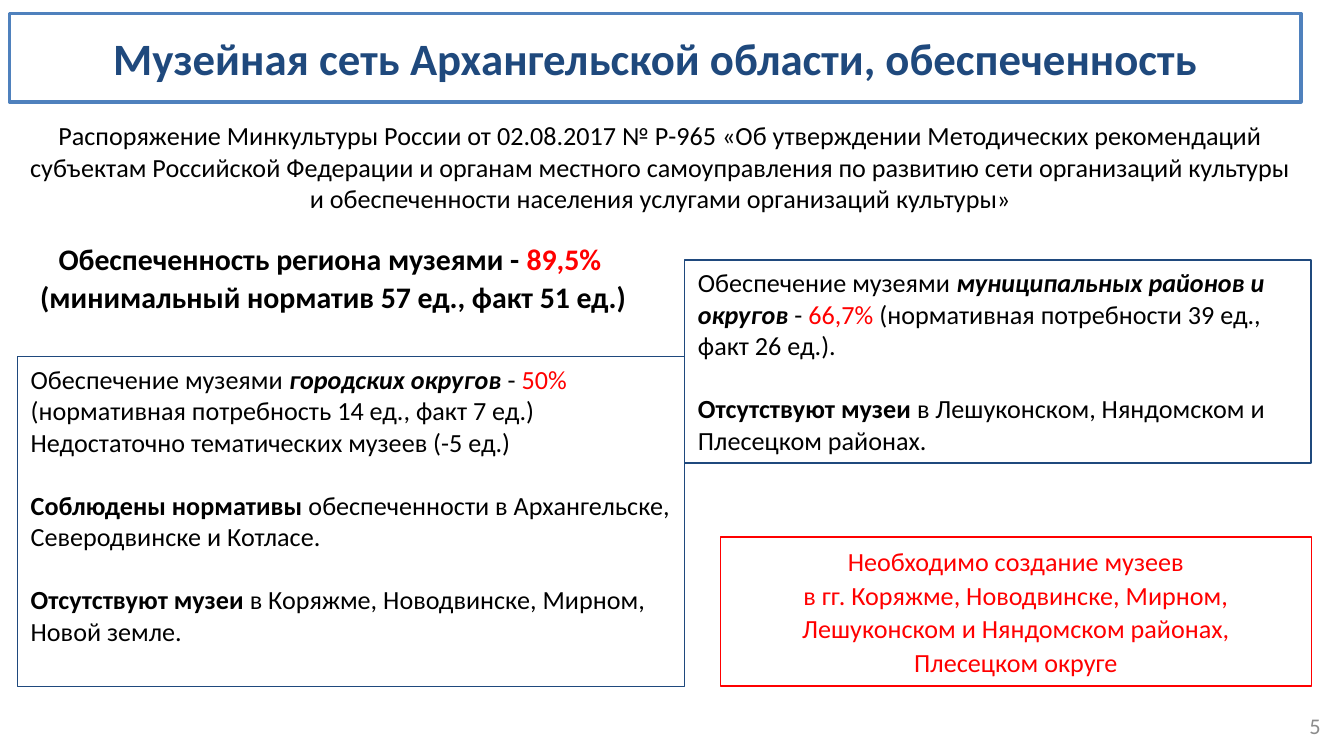
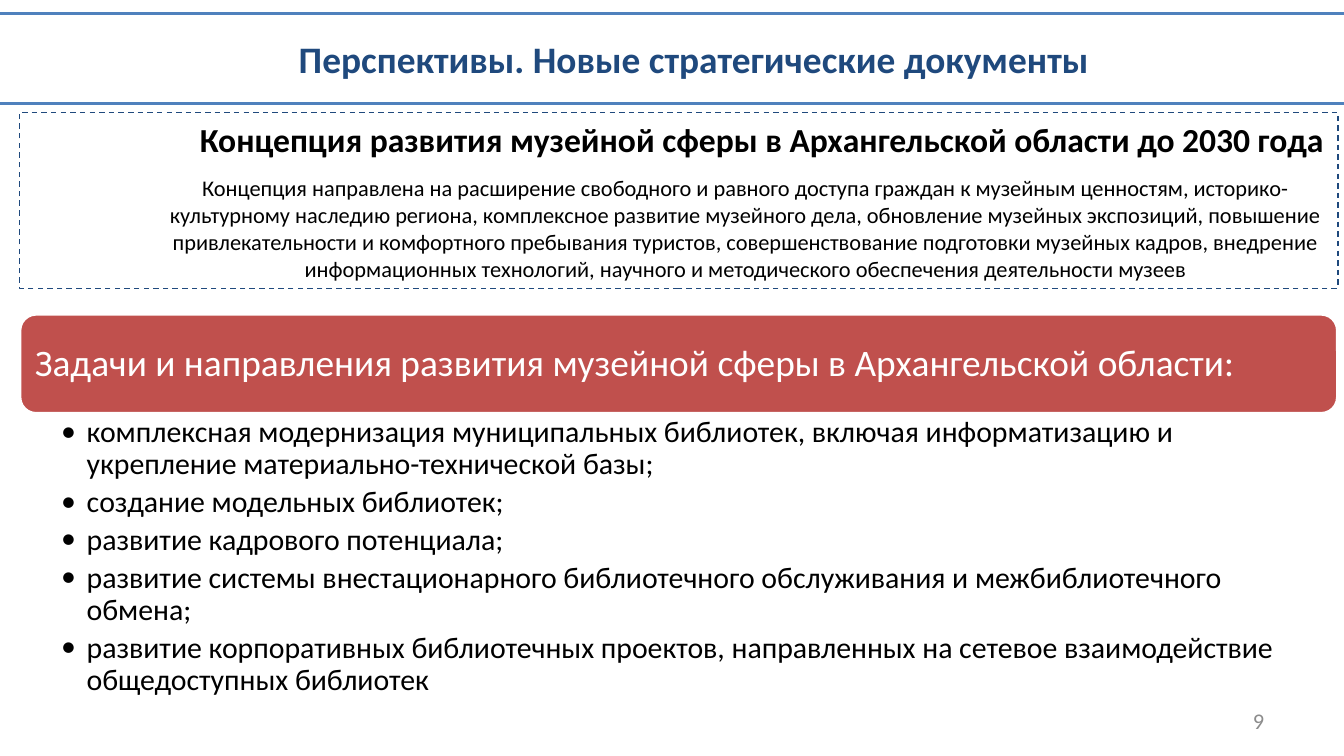
import lxml.etree
import pptx
import pptx.dml.color
import pptx.enum.dml
import pptx.enum.shapes
import pptx.enum.text
import pptx.oxml.ns
import pptx.util

PX = 4572  # 200 px to the inch
FONT = "Calibri"
RGBColor = pptx.dml.color.RGBColor
NAVY = RGBColor(0x1F, 0x49, 0x7D)
BLUE = RGBColor(0x4F, 0x81, 0xBD)
BRICK = RGBColor(0xC0, 0x50, 0x4D)
RED = RGBColor(0xFF, 0x00, 0x00)
GRAY = RGBColor(0x8C, 0x8C, 0x8C)
BLACK = RGBColor(0x00, 0x00, 0x00)
WHITE = RGBColor(0xFF, 0xFF, 0xFF)

LEFT = pptx.enum.text.PP_ALIGN.LEFT
CENTER = pptx.enum.text.PP_ALIGN.CENTER
RIGHT = pptx.enum.text.PP_ALIGN.RIGHT
TOP = pptx.enum.text.MSO_ANCHOR.TOP
MIDDLE = pptx.enum.text.MSO_ANCHOR.MIDDLE
RECTANGLE = pptx.enum.shapes.MSO_SHAPE.RECTANGLE
ROUNDED = pptx.enum.shapes.MSO_SHAPE.ROUNDED_RECTANGLE

BOLD = {"bold": True}
EMPHASIS = {"bold": True, "italic": True}
ALERT = {"color": RED}
PLAIN = {}
PADDING = (20, 10, 20, 10)
TOPIC_GAP = 17


def to_emu(box):
    return [pptx.util.Emu(length * PX) for length in box]


def format_run(run, size, color=BLACK, bold=False, italic=False):
    run.font.name = FONT
    run.font.size = pptx.util.Pt(size)
    run.font.color.rgb = color
    run.font.bold = bold
    run.font.italic = italic


def write(shape, paragraphs, size, align=LEFT, anchor=TOP, padding=PADDING,
          spacing=1.0, gaps=(), wrap=True, **style):
    """Fill a shape; a paragraph is a string or a list of (text, style) pieces."""
    frame = shape.text_frame
    frame.word_wrap = wrap
    frame.vertical_anchor = anchor
    (frame.margin_left, frame.margin_top,
     frame.margin_right, frame.margin_bottom) = to_emu(padding)
    for index, content in enumerate(paragraphs):
        paragraph = frame.add_paragraph() if index else frame.paragraphs[0]
        paragraph.alignment = align
        paragraph.line_spacing = spacing
        if isinstance(content, str):
            paragraph.text = content
            for run in paragraph.runs:
                format_run(run, size, **style)
        else:
            for text, piece_style in content:
                run = paragraph.add_run()
                run.text = text
                format_run(run, size, **{**style, **piece_style})
    for paragraph, gap in zip(frame.paragraphs, gaps):
        paragraph.space_after = pptx.util.Pt(gap)


def add_text(slide, box, paragraphs, size, **options):
    shape = slide.shapes.add_textbox(*to_emu(box))
    write(shape, paragraphs, size, **options)
    return shape


def add_panel(slide, box, line, width=0.75, fill=None, kind=RECTANGLE):
    shape = slide.shapes.add_shape(kind, *to_emu(box))
    shape.shadow.inherit = False
    if fill is None:
        shape.fill.background()
    else:
        shape.fill.solid()
        shape.fill.fore_color.rgb = fill
    shape.line.color.rgb = line
    shape.line.width = pptx.util.Pt(width)
    return shape


def add_title(slide, box, text, size):
    panel = add_panel(slide, box, BLUE, 1.75)
    write(panel, [text], size, align=CENTER, anchor=MIDDLE, wrap=False,
          color=NAVY, bold=True)


def add_page_number(slide, left, top, number):
    add_text(slide, (left, top, 467, 60), [str(number)], 12,
             align=RIGHT, anchor=MIDDLE, color=GRAY)


def add_bullets(shape, indent):
    for paragraph in shape.text_frame.paragraphs:
        properties = paragraph._p.get_or_add_pPr()
        properties.set("marL", str(indent * PX))
        properties.set("indent", str(-indent * PX))
        for tag, name, value in (("a:buFont", "typeface", FONT),
                                 ("a:buChar", "char", "•")):
            element = lxml.etree.SubElement(properties, pptx.oxml.ns.qn(tag))
            element.set(name, value)


def add_provision(slide, box, paragraphs, gaps):
    """Framed notes on museum provision in one kind of municipality."""
    write(add_panel(slide, box, NAVY), paragraphs, 14, gaps=gaps)


def build_provision_slide(slide):
    add_title(slide, (14, 20, 1922, 132),
              "Музейная сеть Архангельской области, обеспеченность", 24)
    add_page_number(slide, 1518, 1050, 5)
    add_text(slide, (0, 344, 992, 136), [
        [("Обеспеченность региона музеями - ", PLAIN), ("89,5% ", ALERT)],
        "(минимальный норматив 57 ед., факт 51 ед.)",
    ], 16, align=CENTER, spacing=1.07, bold=True)
    add_text(slide, (15, 168, 1936, 162), [
        "Распоряжение Минкультуры России от 02.08.2017 № Р-965 «Об утверждении "
        "Методических рекомендаций субъектам Российской Федерации и органам "
        "местного самоуправления по развитию сети организаций культуры и "
        "обеспеченности населения услугами организаций культуры»",
    ], 14, align=CENTER)
    add_provision(slide, (26, 531, 993, 491), [
        [("Обеспечение музеями ", PLAIN), ("городских округов ", EMPHASIS),
         ("- ", PLAIN), ("50%", ALERT),
         (" (нормативная потребность 14 ед., факт 7 ед.)", PLAIN)],
        "Недостаточно тематических музеев (-5 ед.)",
        [("Соблюдены нормативы ", BOLD),
         ("обеспеченности в Архангельске, Северодвинске и Котласе.", PLAIN)],
        [("Отсутствуют музеи ", BOLD),
         ("в Коряжме, Новодвинске, Мирном, Новой земле.", PLAIN)],
    ], (0, TOPIC_GAP, TOPIC_GAP))
    add_provision(slide, (1019, 387, 932, 302), [
        [("Обеспечение музеями ", PLAIN),
         ("муниципальных районов и округов ", EMPHASIS),
         ("- ", PLAIN), ("66,7% ", ALERT),
         ("(нормативная потребности 39 ед., факт 26 ед.).", PLAIN)],
        [("Отсутствуют музеи ", BOLD),
         ("в Лешуконском, Няндомском и Плесецком районах.", PLAIN)],
    ], (TOPIC_GAP,))
    write(add_panel(slide, (1072, 799, 880, 222), RED), [
        "Необходимо создание музеев\vв гг. Коряжме, Новодвинске, Мирном, "
        "Лешуконском и Няндомском районах,",
        "Плесецком округе",
    ], 14, align=CENTER, spacing=1.07, color=RED)


def add_concept_frame(slide, box):
    panel = add_panel(slide, box, NAVY)
    panel.line.dash_style = pptx.enum.dml.MSO_LINE.DASH
    write(panel, ["Концепция развития музейной сферы в Архангельской области "
                  "до 2030 года"], 18, align=RIGHT, bold=True)


def add_concept_summary(slide, box):
    add_text(slide, box, [
        "Концепция направлена на расширение свободного и равного доступа граждан "
        "к музейным ценностям, историко-культурному наследию региона, комплексное "
        "развитие музейного дела, обновление музейных экспозиций, повышение "
        "привлекательности и комфортного пребывания туристов, совершенствование "
        "подготовки музейных кадров, внедрение информационных технологий, "
        "научного и методического обеспечения деятельности музеев",
    ], 12, align=CENTER)


def add_tasks(slide, left, top, width, height):
    header_height = 149
    inset = 7
    add_panel(slide, (left, top, width, header_height), WHITE, 2, BRICK, ROUNDED)
    add_text(slide, (left + inset, top + inset, width - 2 * inset,
                     header_height - 2 * inset), [
        "Задачи и направления развития музейной сферы в Архангельской области:",
    ], 20, anchor=MIDDLE, padding=(16, 16, 16, 16), spacing=0.9, color=WHITE)
    tasks = add_text(
        slide, (left, top + header_height, width, height - header_height), [
            "комплексная модернизация муниципальных библиотек, включая "
            "информатизацию и укрепление материально-технической базы;",
            "создание модельных библиотек;",
            "развитие кадрового потенциала;",
            "развитие системы внестационарного библиотечного обслуживания и "
            "межбиблиотечного обмена;",
            "развитие корпоративных библиотечных проектов, направленных на "
            "сетевое взаимодействие общедоступных библиотек",
        ], 16, padding=(62, 4, 24, 4), spacing=0.9, gaps=(3, 3, 3, 3))
    add_bullets(tasks, 38)


def build_strategy_slide(slide):
    add_concept_frame(slide, (29, 167, 1962, 262))
    add_page_number(slide, 1434, 1042, 9)
    add_title(slide, (-22, 20, 2122, 134),
              "Перспективы. Новые стратегические документы ", 20)
    add_concept_summary(slide, (229, 250, 1762, 182))
    add_tasks(slide, 29, 467, 1962, 609)


def main():
    presentation = pptx.Presentation()
    presentation.slide_width, presentation.slide_height = to_emu((2000, 1125))
    blank = presentation.slide_layouts[6]
    for build in (build_provision_slide, build_strategy_slide):
        build(presentation.slides.add_slide(blank))
    presentation.save("out.pptx")


if __name__ == "__main__":
    main()
